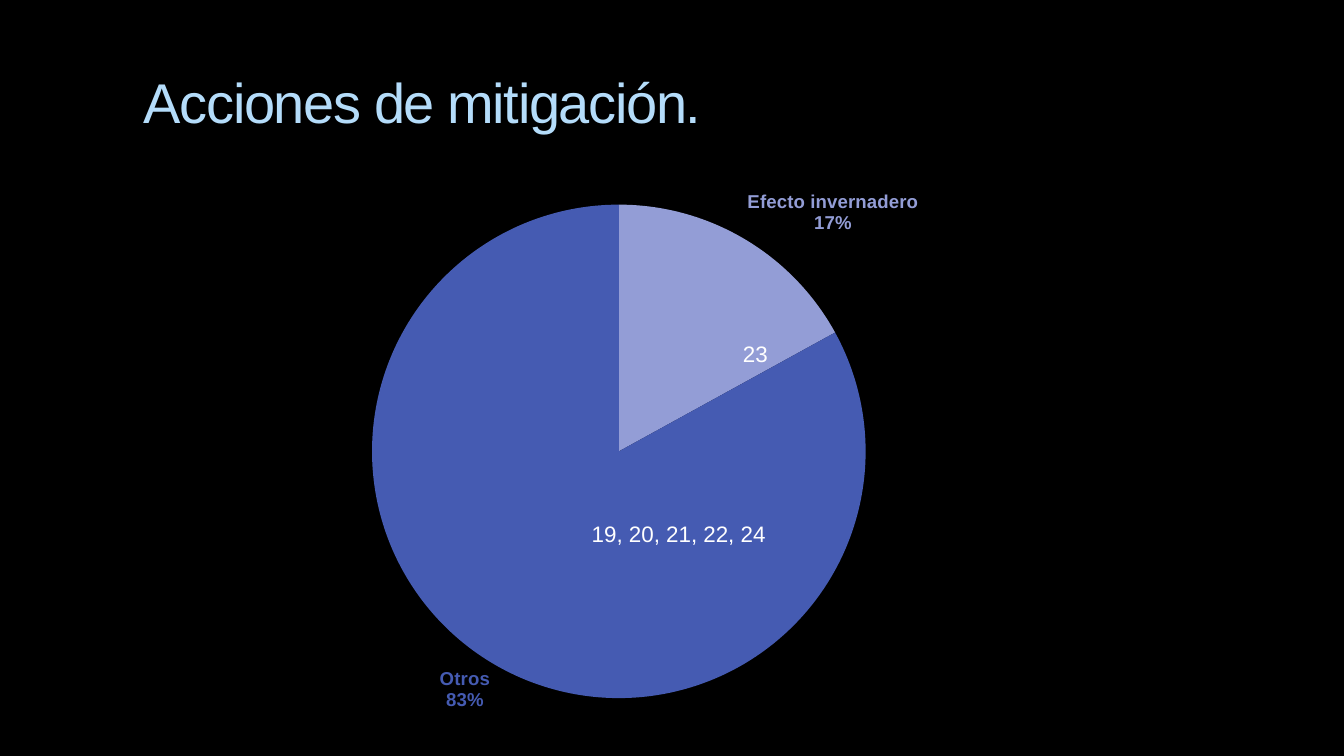
from dataclasses import dataclass

from lxml.etree import SubElement
from pptx import Presentation
from pptx.chart.data import CategoryChartData
from pptx.dml.color import RGBColor
from pptx.enum.chart import XL_CHART_TYPE, XL_LABEL_POSITION
from pptx.oxml.ns import qn
from pptx.util import Inches, Pt


@dataclass(frozen=True)
class Theme:
    font: str = "Arial"
    background: str = "000000"
    title: str = "B4DCFA"
    text: str = "FFFFFF"
    slices: tuple = ("939DD6", "455BB2")
    title_size: float = 40
    note_size: float = 16
    label_size: float = 13.3
    chart_size: float = 10


THEME = Theme()
SHARES = {"Efecto invernadero": 17, "Otros": 83}
PIE_AREA = {"x": 0.25, "y": 0.08, "w": 0.4, "h": 0.85}


def style_font(font, size, color):
    font.name = THEME.font
    font.size = Pt(size)
    font.color.rgb = RGBColor.from_string(color)


def add_text(slide, text, box, size, color, wrap=False, top_margin=0.05, spacing=0):
    frame = slide.shapes.add_textbox(*map(Inches, box)).text_frame
    frame.word_wrap = wrap
    frame.margin_top = Inches(top_margin)
    frame.text = text
    run = frame.paragraphs[0].runs[0]
    style_font(run.font, size, color)
    if spacing:
        run.font._element.set("spc", str(spacing))


def place_pie(chart):
    plot_area = chart._chartSpace.chart.plotArea
    for automatic in plot_area.findall(qn("c:layout")):
        plot_area.remove(automatic)
    layout = SubElement(plot_area, qn("c:layout"))
    plot_area.insert(0, layout)
    manual = SubElement(layout, qn("c:manualLayout"))
    settings = {"layoutTarget": "inner", "xMode": "edge", "yMode": "edge", **PIE_AREA}
    for tag, value in settings.items():
        SubElement(manual, qn(f"c:{tag}")).set("val", str(value))


def show_category_and_percent(chart):
    for label in chart._chartSpace.iter(qn("c:dLbl")):
        for tag, shown in (("showVal", "0"), ("showCatName", "1"), ("showPercent", "1")):
            label.find(qn(f"c:{tag}")).set("val", shown)
        SubElement(label, qn("c:separator")).text = "\n"


def add_pie(slide, box):
    shares = CategoryChartData()
    shares.categories = list(SHARES)
    shares.add_series("Series 1", list(SHARES.values()))
    chart = slide.shapes.add_chart(
        XL_CHART_TYPE.PIE, *map(Inches, box), shares
    ).chart
    chart.has_title = False
    chart.has_legend = False
    style_font(chart.font, THEME.chart_size, THEME.text)
    pie = chart.plots[0]
    pie.vary_by_categories = True
    for index, color in enumerate(THEME.slices):
        portion = pie.series[0].points[index]
        portion.format.fill.solid()
        portion.format.fill.fore_color.rgb = RGBColor.from_string(color)
        portion.format.line.fill.background()
        label = portion.data_label
        style_font(label.font, THEME.label_size, color)
        label.font.bold = True
        label.position = XL_LABEL_POSITION.OUTSIDE_END
    show_category_and_percent(chart)
    place_pie(chart)


def main():
    deck = Presentation()
    deck.slide_width, deck.slide_height = Inches(13.33), Inches(7.5)
    slide = deck.slides.add_slide(deck.slide_layouts[6])
    slide.background.fill.solid()
    slide.background.fill.fore_color.rgb = RGBColor.from_string(THEME.background)
    add_text(slide, "Acciones de mitigación.", (1.33, 0.56, 11.33, 1),
             THEME.title_size, THEME.title, wrap=True, top_margin=0.11, spacing=-100)
    add_pie(slide, (0.63, 1.56, 12.24, 5.78))
    add_text(slide, "23", (7.27, 3.33, 0.45, 0.37), THEME.note_size, THEME.text)
    add_text(slide, "19, 20, 21, 22, 24", (5.77, 5.11, 1.95, 0.37),
             THEME.note_size, THEME.text)
    deck.save("out.pptx")


if __name__ == "__main__":
    main()
